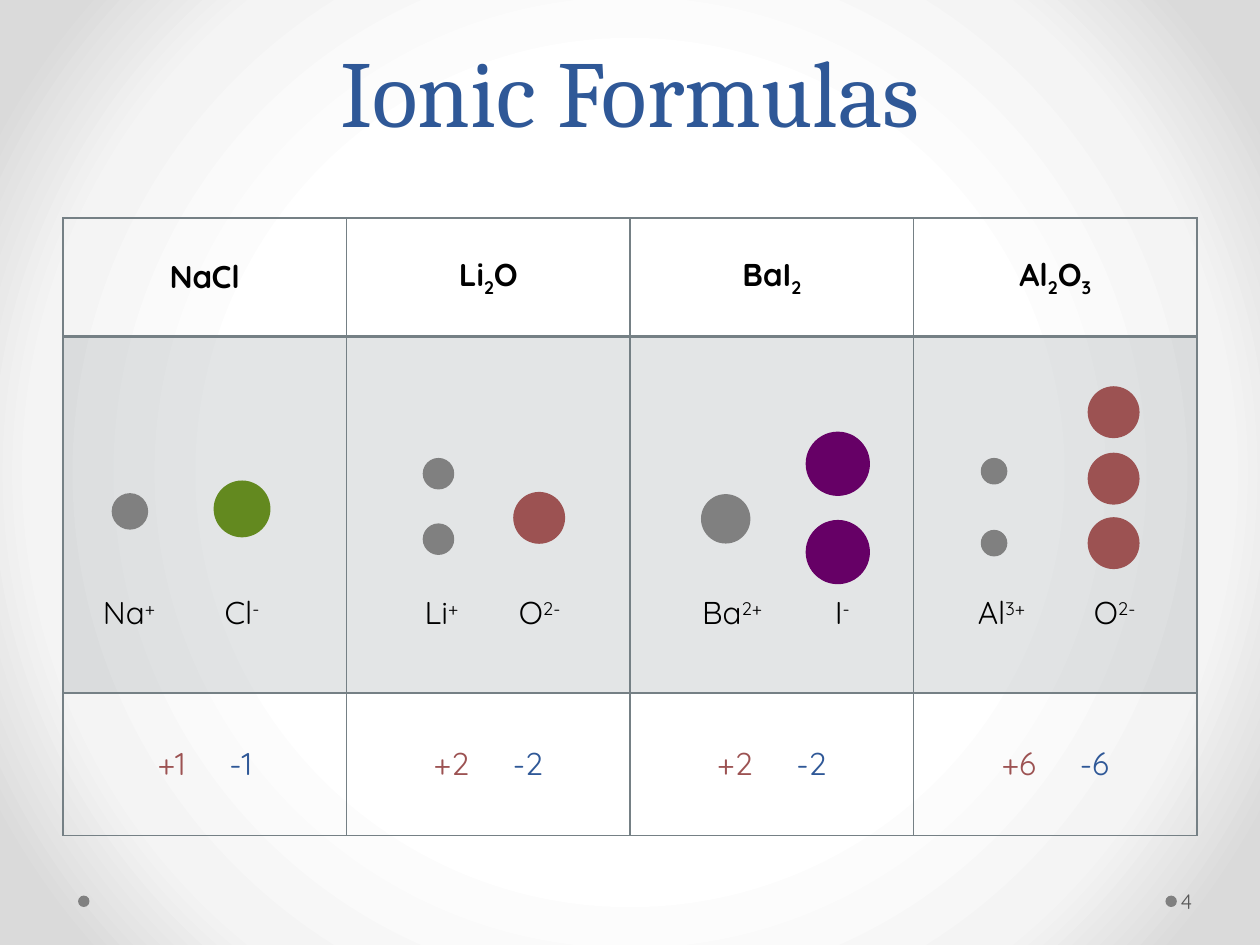
"""Build a slide that compares ionic formulas, their ions and their total charges."""
from lxml.etree import SubElement
from pptx import Presentation
from pptx.dml.color import RGBColor
from pptx.enum.shapes import MSO_SHAPE
from pptx.enum.text import MSO_ANCHOR, PP_ALIGN
from pptx.oxml import parse_xml
from pptx.oxml.ns import nsdecls, qn
from pptx.util import Cm, Pt

BLUE = RGBColor(0x2F, 0x58, 0x97)
RED = RGBColor(0x9C, 0x52, 0x52)
GREEN = RGBColor(0x63, 0x89, 0x1F)
PURPLE = RGBColor(0x66, 0x00, 0x66)
GRAY = RGBColor(0x80, 0x80, 0x80)
SLATE = RGBColor(0x75, 0x80, 0x85)
DARK = RGBColor(0x59, 0x59, 0x59)
BLACK = RGBColor(0, 0, 0)
TITLE_FONT, BODY_FONT = "Cambria", "Quicksand"
SUBSCRIPT, SUPERSCRIPT = -25000, 30000

TITLE = "Ionic Formulas"
PAGE_NUMBER = "4"
FORMULAS = ["NaCl", "Li2O", "BaI2", "Al2O3"]
CHARGES = [1, 2, 2, 6]
ROW_HEIGHTS = [2.39, 7.19, 2.87]
COLUMN_WIDTH = 5.715
TABLE_LEFT, TABLE_TOP = 1.27, 4.39
LABEL_TOP, LABEL_HEIGHT = 11.84, 1.02
# symbol, charge, colour, diameter, centre x, centre ys, label centre x, label width
IONS = [
    ("Na", "+", GRAY, 0.71, 2.62, [10.31], 2.6, 1.7),
    ("Cl", "-", GREEN, 1.12, 4.88, [10.26], 4.88, 1.37),
    ("Li", "+", GRAY, 0.61, 8.84, [9.55, 10.87], 8.9, 1.45),
    ("O", "2-", RED, 1.02, 10.87, [10.44], 10.88, 1.7),
    ("Ba", "2+", GRAY, 0.97, 14.63, [10.46], 14.76, 2.13),
    ("I", "-", PURPLE, 1.27, 16.89, [9.35, 11.13], 16.98, 1.7),
    ("Al", "3+", GRAY, 0.51, 20.04, [9.5, 10.95], 20.19, 2.13),
    ("O", "2-", RED, 1.02, 22.45, [8.31, 9.65, 10.95], 22.47, 1.7),
]
FOOTER_DOTS = [1.69, 23.61]
BACKGROUND_STOPS = [(50, "FFFFFF"), (76, "F4F4F4"), (92, "DADADA")]


def paint_background(page):
    stops = "".join(
        f'<a:gs pos="{share * 1000}"><a:srgbClr val="{color}"/></a:gs>'
        for share, color in BACKGROUND_STOPS
    )
    background = parse_xml(
        f'<p:bg {nsdecls("p", "a")}><p:bgPr><a:gradFill rotWithShape="1">'
        f'<a:gsLst>{stops}</a:gsLst><a:path path="circle">'
        '<a:fillToRect l="50000" t="50000" r="50000" b="50000"/></a:path>'
        "</a:gradFill><a:effectLst/></p:bgPr></p:bg>"
    )
    page.element.cSld.insert(0, background)


def style(para, size=18, color=BLACK, align=PP_ALIGN.CENTER, name=BODY_FONT):
    para.alignment = align
    para.font.size, para.font.name = Pt(size), name
    para.font.color.rgb = color


def add_span(para, text, **attributes):
    span = para.add_run()
    span.text = text
    for key, value in attributes.items():
        span._r.get_or_add_rPr().set(key, str(value))
    return span


def add_circle(page, x, y, diameter, color, outlined=True):
    circle = page.shapes.add_shape(
        MSO_SHAPE.OVAL, Cm(x - diameter / 2), Cm(y - diameter / 2), Cm(diameter), Cm(diameter)
    )
    circle.shadow.inherit = False
    circle.fill.solid()
    circle.fill.fore_color.rgb = color
    if outlined:
        circle.line.color.rgb = color
        circle.line.width = Pt(0.75)
    else:
        circle.line.fill.background()


def format_cell(cell, row):
    cell.vertical_anchor = MSO_ANCHOR.MIDDLE
    properties = cell._tc.get_or_add_tcPr()
    widths = {"L": 1, "R": 1, "T": 2 if row == 1 else 1, "B": 2 if row == 0 else 1}
    for side, width in widths.items():
        border = SubElement(properties, qn(f"a:ln{side}"), w=str(Pt(width)))
        fill = SubElement(border, qn("a:solidFill"))
        SubElement(fill, qn("a:srgbClr"), val=str(SLATE))
    if row == 1:
        cell.fill.solid()
        cell.fill.fore_color.rgb = SLATE
        SubElement(properties.find(f'{qn("a:solidFill")}/{qn("a:srgbClr")}'), qn("a:alpha"), val="20000")
    else:
        cell.fill.background()


def add_formula_table(page):
    frame = page.shapes.add_table(
        len(ROW_HEIGHTS), len(FORMULAS), Cm(TABLE_LEFT), Cm(TABLE_TOP),
        Cm(COLUMN_WIDTH * len(FORMULAS)), Cm(sum(ROW_HEIGHTS)),
    )
    table = frame.table
    table.first_row = table.horz_banding = False
    for row, height in enumerate(ROW_HEIGHTS):
        table.rows[row].height = Cm(height)
    for column, (formula, charge) in enumerate(zip(FORMULAS, CHARGES)):
        table.columns[column].width = Cm(COLUMN_WIDTH)
        for row in range(len(ROW_HEIGHTS)):
            cell = table.cell(row, column)
            format_cell(cell, row)
            style(cell.text_frame.paragraphs[0])
        para = table.cell(0, column).text_frame.paragraphs[0]
        para.font.bold = True
        for symbol in formula:
            add_span(para, symbol, **({"baseline": SUBSCRIPT} if symbol.isdigit() else {}))
        para = table.cell(2, column).text_frame.paragraphs[0]
        add_span(para, f"+{charge}").font.color.rgb = RED
        add_span(para, " ", spc=2000)
        add_span(para, f"-{charge}").font.color.rgb = BLUE


def add_ion(page, symbol, charge, color, diameter, x, ys, label_x, width):
    for y in ys:
        add_circle(page, x, y, diameter, color)
    box = page.shapes.add_textbox(
        Cm(label_x - width / 2), Cm(LABEL_TOP), Cm(width), Cm(LABEL_HEIGHT)
    )
    box.text_frame.word_wrap = True
    para = box.text_frame.paragraphs[0]
    style(para)
    add_span(para, symbol)
    add_span(para, charge, baseline=SUPERSCRIPT)


def add_title(page):
    title = page.shapes.title
    title.left, title.top, title.width, title.height = Cm(1.27), Cm(0), Cm(22.86), Cm(3.07)
    title.text_frame.text = TITLE
    title.text_frame.vertical_anchor = MSO_ANCHOR.BOTTOM
    para = title.text_frame.paragraphs[0]
    para.line_spacing = Pt(58)
    style(para, 54, BLUE, name=TITLE_FONT)


def add_footer(page):
    for x in FOOTER_DOTS:
        add_circle(page, x, 18.17, 0.23, GRAY, outlined=False)
    box = page.shapes.add_textbox(Cm(23.72), Cm(17.65), Cm(1.55), Cm(1.02))
    frame = box.text_frame
    frame.word_wrap = True
    frame.vertical_anchor = MSO_ANCHOR.MIDDLE
    frame.margin_left, frame.margin_right = Cm(0.08), Cm(0.13)
    frame.text = PAGE_NUMBER
    style(frame.paragraphs[0], 12, DARK, PP_ALIGN.LEFT)


def main():
    deck = Presentation()
    deck.slide_width, deck.slide_height = Cm(25.4), Cm(19.05)
    page = deck.slides.add_slide(deck.slide_layouts[5])
    paint_background(page)
    add_title(page)
    add_footer(page)
    add_formula_table(page)
    for ion in IONS:
        add_ion(page, *ion)
    deck.save("out.pptx")


if __name__ == "__main__":
    main()
